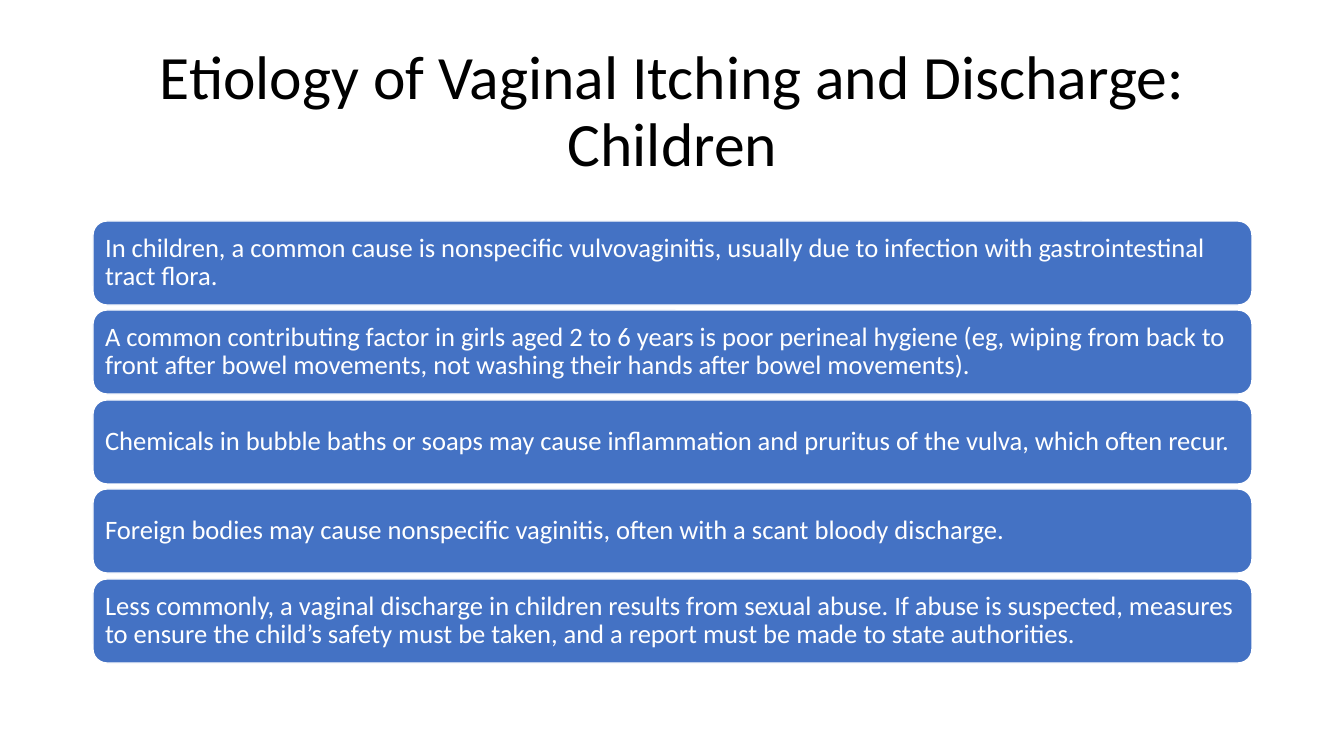
from pptx import Presentation
from pptx.dml.color import RGBColor
from pptx.enum.shapes import MSO_SHAPE as Shape
from pptx.enum.text import MSO_ANCHOR as Anchor, PP_ALIGN as Align
from pptx.util import Pt

EMU_PER_PX = 914400 / 100.8
COLORS = {"title": "000000", "card": "4472C4", "white": "FFFFFF"}
TITLE_LINES = ["Etiology of Vaginal Itching and Discharge:", "Children"]
CAUSES = [
    "In children, a common cause is nonspecific vulvovaginitis, usually due to "
    "infection with gastrointestinal tract flora.",
    "A common contributing factor in girls aged 2 to 6 years is poor perineal hygiene "
    "(eg, wiping from back to front after bowel movements, not washing their hands "
    "after bowel movements).",
    "Chemicals in bubble baths or soaps may cause inflammation and pruritus of the "
    "vulva, which often recur.",
    "Foreign bodies may cause nonspecific vaginitis, often with a scant bloody discharge.",
    "Less commonly, a vaginal discharge in children results from sexual abuse. If abuse "
    "is suspected, measures to ensure the child’s safety must be taken, and a report "
    "must be made to state authorities.",
]
LEFT, WIDTH = 93, 1159
FIRST_TOP, CARD_HEIGHT, TWO_STEPS = 221, 84, 179


def px(length):
    return round(length * EMU_PER_PX)


def color(name):
    return RGBColor.from_string(COLORS[name])


class SlideBuilder:
    font = "Calibri"
    line_spacing = 0.9

    def __init__(self, page):
        self.page = page

    def set_text(self, box, lines, size, tint, align, inset_x, inset_y):
        """Fill a box with one paragraph, broken between the given lines."""
        frame = box.text_frame
        frame.word_wrap = True
        frame.vertical_anchor = Anchor.MIDDLE
        frame.margin_left = frame.margin_right = px(inset_x)
        frame.margin_top = frame.margin_bottom = px(inset_y)
        para = frame.paragraphs[0]
        for index, line in enumerate(lines):
            if index:
                para.add_line_break()
            para.add_run().text = line
        para.alignment = align
        para.line_spacing = self.line_spacing
        para.font.name = self.font
        para.font.size = Pt(size)
        para.font.color.rgb = color(tint)

    def title(self, lines, left, top, width, height):
        box = self.page.shapes.add_textbox(px(left), px(top), px(width), px(height))
        self.set_text(box, lines, 44, "title", Align.CENTER, 10, 5)

    def card(self, text, left, top, width, height):
        box = self.page.shapes.add_shape(
            Shape.ROUNDED_RECTANGLE, px(left), px(top), px(width), px(height))
        box.shadow.inherit = False
        box.fill.solid()
        box.fill.fore_color.rgb = color("card")
        box.line.color.rgb = color("white")
        box.line.width = Pt(1)
        self.set_text(box, [text], 19, "white", Align.LEFT, 8, 8)


def main():
    deck = Presentation()
    deck.slide_width, deck.slide_height = px(1344), px(756)
    builder = SlideBuilder(deck.slides.add_slide(deck.slide_layouts[6]))
    builder.title(TITLE_LINES, LEFT, 40, WIDTH, 146)
    for index, cause in enumerate(CAUSES):
        top = FIRST_TOP + index * TWO_STEPS // 2
        builder.card(cause, LEFT, top, WIDTH, CARD_HEIGHT)
    deck.save("out.pptx")


if __name__ == "__main__":
    main()
